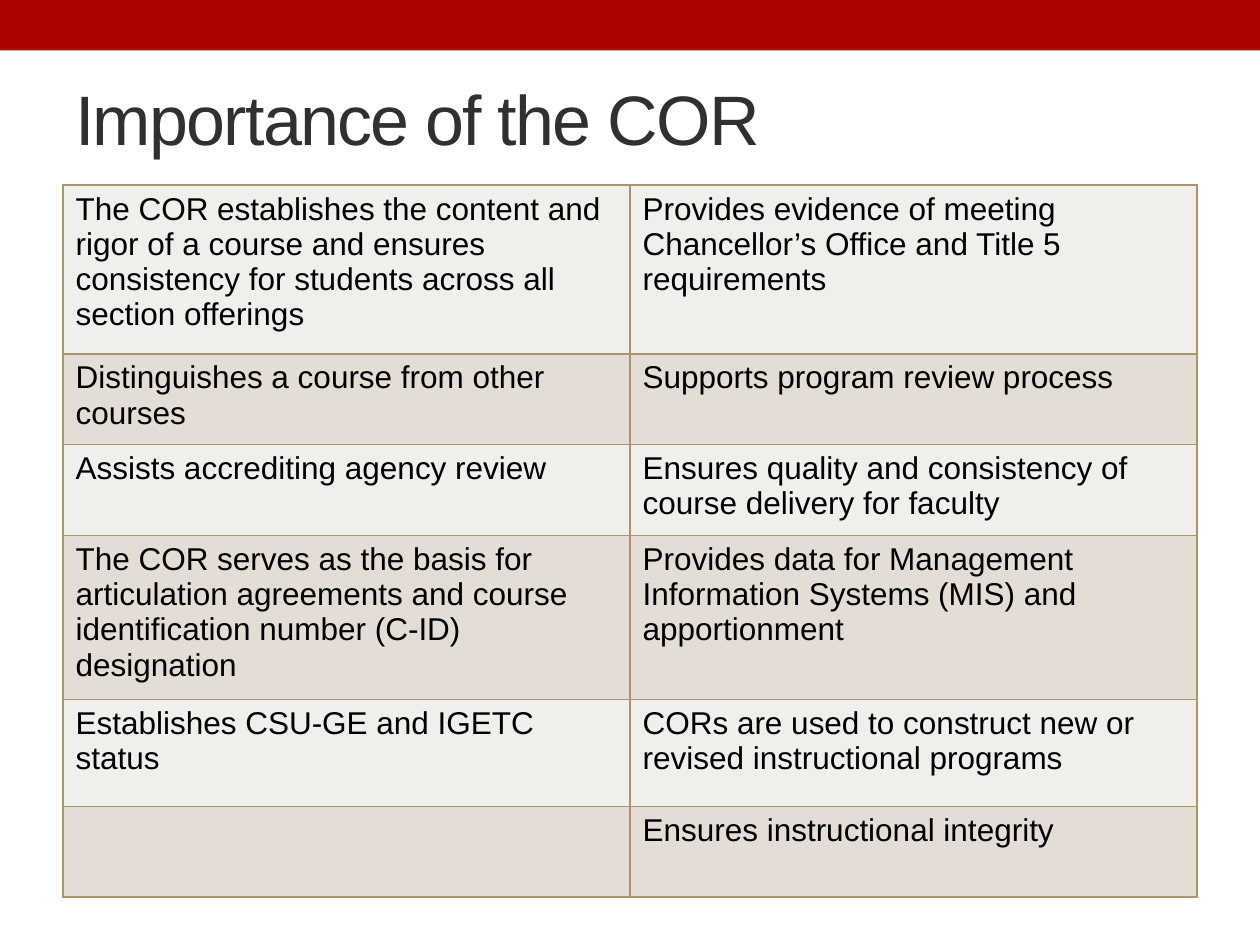
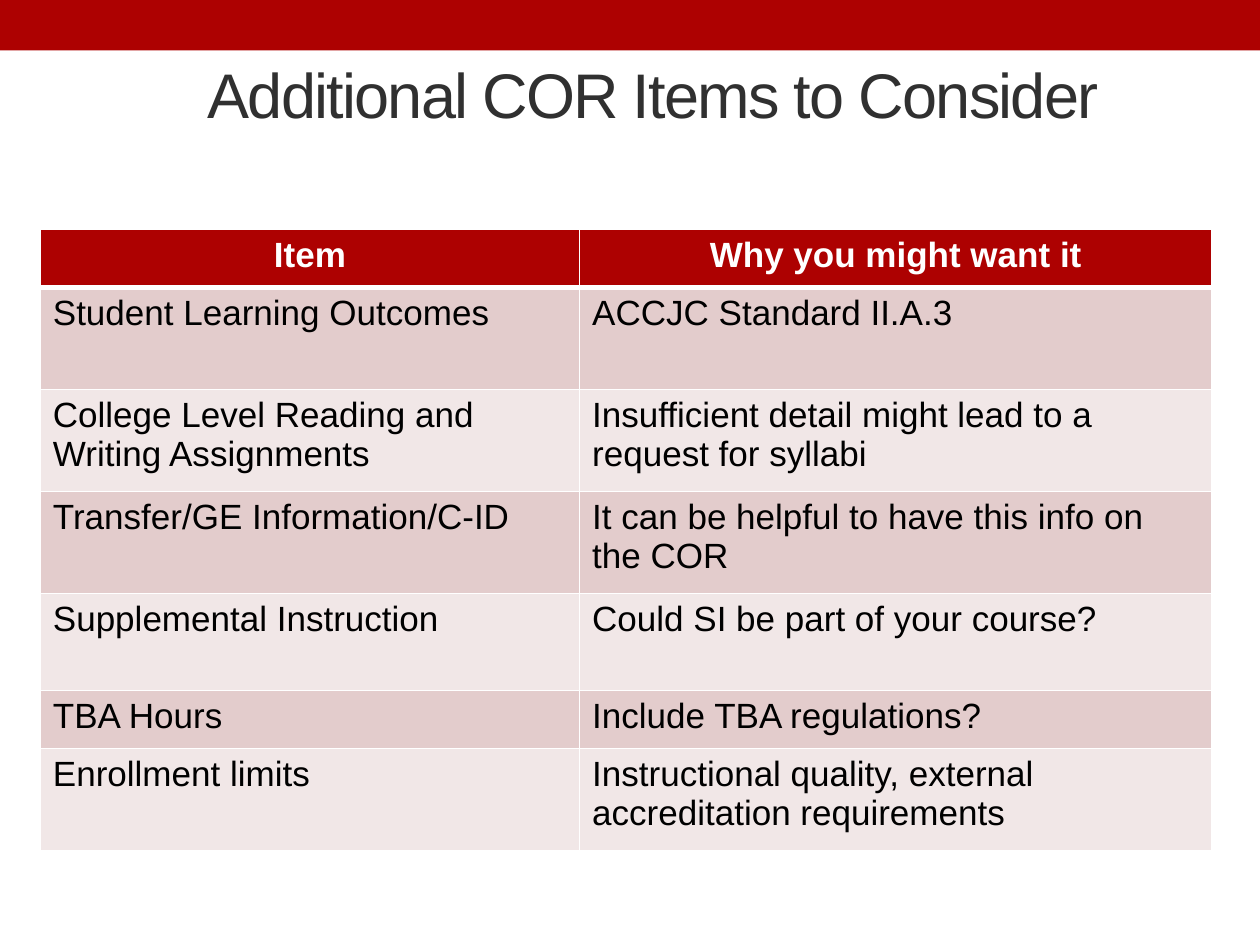
from pptx import Presentation
from pptx.dml.color import RGBColor
from pptx.enum.shapes import MSO_SHAPE
from pptx.enum.text import MSO_ANCHOR, PP_ALIGN
from pptx.oxml import parse_xml
from pptx.oxml.ns import nsdecls
from pptx.util import Inches, Pt

FONT = "Arial"
HUE = {
    "red": "AD0101", "title": "303030", "text": "000000", "white": "FFFFFF",
    "tan": "AC956E", "sand": "F1EFEB", "clay": "E3DDD5",
    "rose": "E3CCCC", "blush": "F1E7E7",
}

deck = Presentation()
deck.slide_width, deck.slide_height = Inches(10), Inches(7.5)

# Grid of 100 columns by 75 rows
COL = deck.slide_width / 100
ROW = deck.slide_height / 75

PAGES = [
    {
        "title": "Importance of the COR", "size": 40, "box": (5, 3.9, 90, 10.8),
        "at": (5, 14.7), "cols": (45, 45), "rows": (13.4, 7.2, 7.2, 13, 8.5, 7.2),
        "text": 18, "head": False, "edge": "tan", "bands": ("sand", "clay"),
        "cells": [
            ("The COR establishes the content and rigor of a course and ensures "
             "consistency for students across all section offerings",
             "Provides evidence of meeting Chancellor’s Office and Title 5 requirements"),
            ("Distinguishes a course from other courses",
             "Supports program review process"),
            ("Assists accrediting agency review",
             "Ensures quality and consistency of course delivery for faculty"),
            ("The COR serves as the basis for articulation agreements and course "
             "identification number (C-ID) designation",
             "Provides data for Management Information Systems (MIS) and apportionment"),
            ("Establishes CSU-GE and IGETC status",
             "CORs are used to construct new or revised instructional programs"),
            ("", "Ensures instructional integrity"),
        ],
    },
    {
        "title": "Additional COR Items to Consider", "size": 36, "box": (15.5, 0.7, 77, 13.4),
        "at": (3.2, 18.2), "cols": (42.8, 50.2), "rows": (4.6, 8.1, 8.1, 8.1, 7.7, 4.6, 8.1),
        "text": 20, "head": True, "edge": "white", "bands": ("blush", "rose"),
        "cells": [
            ("Item", "Why you might want it"),
            ("Student Learning Outcomes", "ACCJC Standard II.A.3"),
            ("College Level Reading and Writing Assignments",
             "Insufficient detail might lead to a request for syllabi"),
            ("Transfer/GE Information/C-ID",
             "It can be helpful to have this info on the COR"),
            ("Supplemental Instruction", "Could SI be part of your course?"),
            ("TBA Hours", "Include TBA regulations?"),
            ("Enrollment limits",
             "Instructional quality, external accreditation requirements"),
        ],
    },
]


def style(para, size, hue, bold=False):
    for run in para.runs:
        run.font.name = FONT
        run.font.size = Pt(size)
        run.font.bold = bold
        run.font.color.rgb = RGBColor.from_string(HUE[hue])


def edge(cell, side, hue, width):
    cell._tc.get_or_add_tcPr().append(parse_xml(
        f'<a:ln{side} {nsdecls("a")} w="{Pt(width)}"><a:solidFill>'
        f'<a:srgbClr val="{HUE[hue]}"/></a:solidFill></a:ln{side}>'))


for page in PAGES:
    slide = deck.slides.add_slide(deck.slide_layouts[6])

    # Top band
    band = slide.shapes.add_shape(MSO_SHAPE.RECTANGLE, 0, 0, deck.slide_width, int(4 * ROW))
    band.shadow.inherit = False
    band.fill.solid()
    band.fill.fore_color.rgb = RGBColor.from_string(HUE["red"])
    band.line.fill.background()

    # Title
    left, top, width, height = page["box"]
    box = slide.shapes.add_textbox(int(left * COL), int(top * ROW),
                                   int(width * COL), int(height * ROW))
    frame = box.text_frame
    frame.word_wrap = True
    frame.vertical_anchor = MSO_ANCHOR.MIDDLE
    frame.text = page["title"]
    style(frame.paragraphs[0], page["size"], "title")
    frame.paragraphs[0].runs[0].font._element.set("spc", "-100")

    # Table
    left, top = page["at"]
    cols, rows = page["cols"], page["rows"]
    grid = slide.shapes.add_table(len(rows), len(cols), int(left * COL), int(top * ROW),
                                  int(sum(cols) * COL), int(sum(rows) * ROW)).table
    for c, width in enumerate(cols):
        grid.columns[c].width = int(width * COL)
    for r, height in enumerate(rows):
        grid.rows[r].height = int(height * ROW)
        head = page["head"] and r == 0
        fill = "red" if head else page["bands"][r % 2]
        for c, words in enumerate(page["cells"][r]):
            cell = grid.cell(r, c)
            cell.text_frame.text = words
            para = cell.text_frame.paragraphs[0]
            para.alignment = PP_ALIGN.CENTER if head else PP_ALIGN.LEFT
            style(para, page["text"], "white" if head else "text", head)
            for side in "LRTB":
                thick = page["head"] and (r, side) in ((0, "B"), (1, "T"))
                edge(cell, side, page["edge"], 3 if thick else 1)
            cell.fill.solid()
            cell.fill.fore_color.rgb = RGBColor.from_string(HUE[fill])

deck.save("out.pptx")
